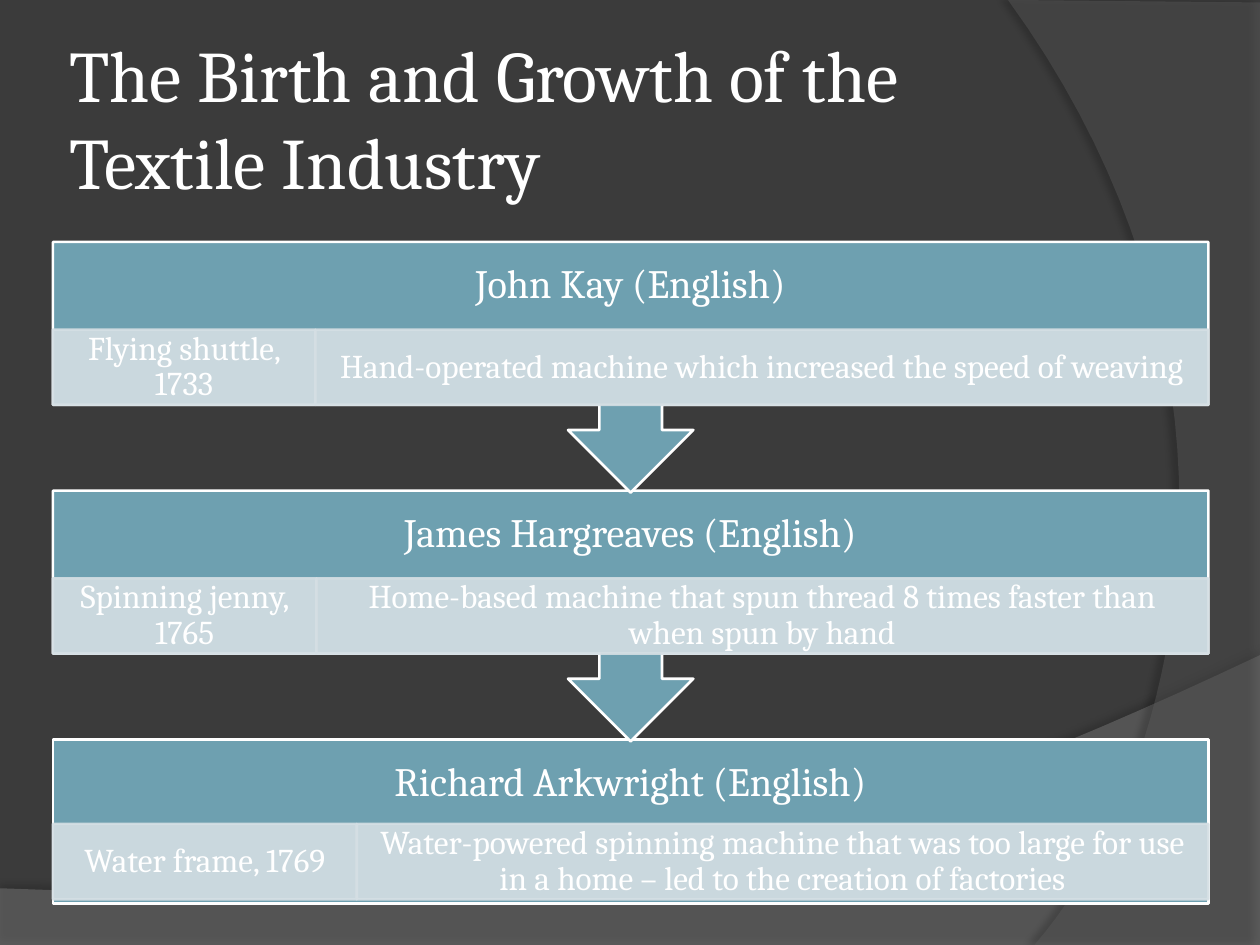
from collections import namedtuple

from lxml.etree import SubElement
from pptx import Presentation
from pptx.dml.color import RGBColor
from pptx.enum.shapes import MSO_SHAPE
from pptx.enum.text import MSO_ANCHOR, PP_ALIGN
from pptx.oxml.ns import qn
from pptx.util import Inches, Pt

BACKGROUND = RGBColor(0x3B, 0x3B, 0x3B)
SWOOSH = RGBColor(0x7F, 0x7F, 0x7F)
ARC = RGBColor(0x5E, 0x5E, 0x5E)
TEAL = RGBColor(0x6E, 0xA0, 0xB0)
PALE = RGBColor(0xD5, 0xDF, 0xE4)
WHITE = RGBColor(0xFF, 0xFF, 0xFF)
FONT = "Cambria"

STEPS = [
    ("John Kay (English)", "Flying shuttle, 1733",
     "Hand-operated machine which increased the speed of weaving", 0.227),
    ("James Hargreaves (English)", "Spinning jenny, 1765",
     "Home-based machine that spun thread 8 times faster than when spun by hand", 0.228),
    ("Richard Arkwright (English)", "Water frame, 1769",
     "Water-powered spinning machine that was too large for use in a home "
     "– led to the creation of factories", 0.263),
]

Box = namedtuple("Box", "x y w h")


def inner(box, x, y, w, h):
    return Box(box.x + x * box.w, box.y + y * box.h, w * box.w, h * box.h)


def emu(box):
    return [Inches(v) for v in box]


def set_alpha(fill, percent):
    color = fill.find(qn("a:solidFill"))[0]
    SubElement(color, qn("a:alpha"), val=str(percent * 1000))


def paint(sp, fill, line=None, alpha=None):
    sp.shadow.inherit = False
    sp.fill.solid()
    sp.fill.fore_color.rgb = fill
    if line is None:
        sp.line.fill.background()
    else:
        sp.line.color.rgb = line
        sp.line.width = Pt(1.5)
    if alpha:
        props = sp._element.spPr
        set_alpha(props, alpha)
        if line is not None:
            set_alpha(props.find(qn("a:ln")), alpha)


def write(sp, text, size, align=PP_ALIGN.CENTER, spacing=0.9, inset=(0.15, 0.03)):
    tf = sp.text_frame
    tf.word_wrap = True
    tf.vertical_anchor = MSO_ANCHOR.MIDDLE
    tf.margin_left = tf.margin_right = Inches(inset[0])
    tf.margin_top = tf.margin_bottom = Inches(inset[1])
    p = tf.paragraphs[0]
    p.alignment = align
    p.line_spacing = spacing
    r = p.add_run()
    r.text = text
    r.font.size = Pt(size)
    r.font.name = FONT
    r.font.color.rgb = WHITE


def curve(start, c1, c2, end, steps=40):
    weights = [((1 - t) ** 3, 3 * t * (1 - t) ** 2, 3 * t * t * (1 - t), t ** 3)
               for t in (i / steps for i in range(steps + 1))]
    return [tuple(sum(k * pt[axis] for k, pt in zip(ks, (start, c1, c2, end)))
                  for axis in (0, 1)) for ks in weights]


def add_backdrop_piece(s, points, color, alpha, shadow_alpha, distance, direction):
    points = [(Inches(x), Inches(y)) for x, y in points]
    builder = s.shapes.build_freeform(*points[0])
    builder.add_line_segments(points[1:], close=True)
    sp = builder.convert_to_shape()
    paint(sp, color, alpha=alpha)
    shadow = SubElement(sp._element.spPr.find(qn("a:effectLst")), qn("a:outerShdw"),
                        blurRad=str(Pt(4)), dist=str(Pt(distance)),
                        dir=str(direction * 60000), algn="ctr", rotWithShape="0")
    shade = SubElement(shadow, qn("a:srgbClr"), val="000000")
    SubElement(shade, qn("a:alpha"), val=str(shadow_alpha * 1000))


def add_backdrop(s, box):
    s.background.fill.solid()
    s.background.fill.fore_color.rgb = BACKGROUND
    right, bottom = box.w, box.h
    swoosh = [(0, bottom), (right, bottom)]
    swoosh += curve((right, 5.2), (5.59, 7.29), (3.91, 7.19), (0, 7.05))
    add_backdrop_piece(s, swoosh, SWOOSH, 45, 35, 3.5, 270)
    arc = [(right, 0.02), (right, bottom)]
    arc += curve((8.21, bottom), (9.35, 6.19), (10.18, 3), (8, 0))
    add_backdrop_piece(s, arc, ARC, 40, 45, 4, 180)


def add_title(s, box):
    sp = s.shapes.add_textbox(*emu(box))
    write(sp, "The Birth and Growth of the Textile Industry", 41.4,
          align=PP_ALIGN.LEFT, spacing=1.0, inset=(0.05, 0.05))


def add_step(s, box, step, last):
    name, invention, detail, split = step
    kind = MSO_SHAPE.RECTANGLE if last else MSO_SHAPE.UP_ARROW_CALLOUT
    head, top, height = (0.54, 0.515, 0.46) if last else (0.35, 0.35, 0.3)
    panel = s.shapes.add_shape(kind, *emu(box))
    panel.rotation = 0 if last else 180
    paint(panel, TEAL, WHITE)
    label = s.shapes.add_textbox(*emu(inner(box, 0, 0, 1, head)))
    write(label, name, 23, inset=(0.18, 0.18))
    for text, x, width in ((invention, 0, split), (detail, split, 1 - split)):
        cell = s.shapes.add_shape(MSO_SHAPE.RECTANGLE,
                                  *emu(inner(box, x, top, width, height)))
        paint(cell, PALE, PALE, alpha=90)
        write(cell, text, 19)


def add_flow(s, box):
    pitch, callout, final = 0.376, 0.379, 0.248
    for i, step in reversed(list(enumerate(STEPS))):
        last = i == len(STEPS) - 1
        add_step(s, inner(box, 0, i * pitch, 1, final if last else callout), step, last)


def main():
    prs = Presentation()
    prs.slide_width, prs.slide_height = Inches(10), Inches(7.5)
    s = prs.slides.add_slide(prs.slide_layouts[6])
    page = Box(0, 0, 10, 7.5)
    add_backdrop(s, page)
    add_title(s, inner(page, 0.05, 0.04, 0.817, 0.167))
    add_flow(s, inner(page, 0.042, 0.256, 0.917, 0.7))
    prs.save("out.pptx")


if __name__ == "__main__":
    main()
